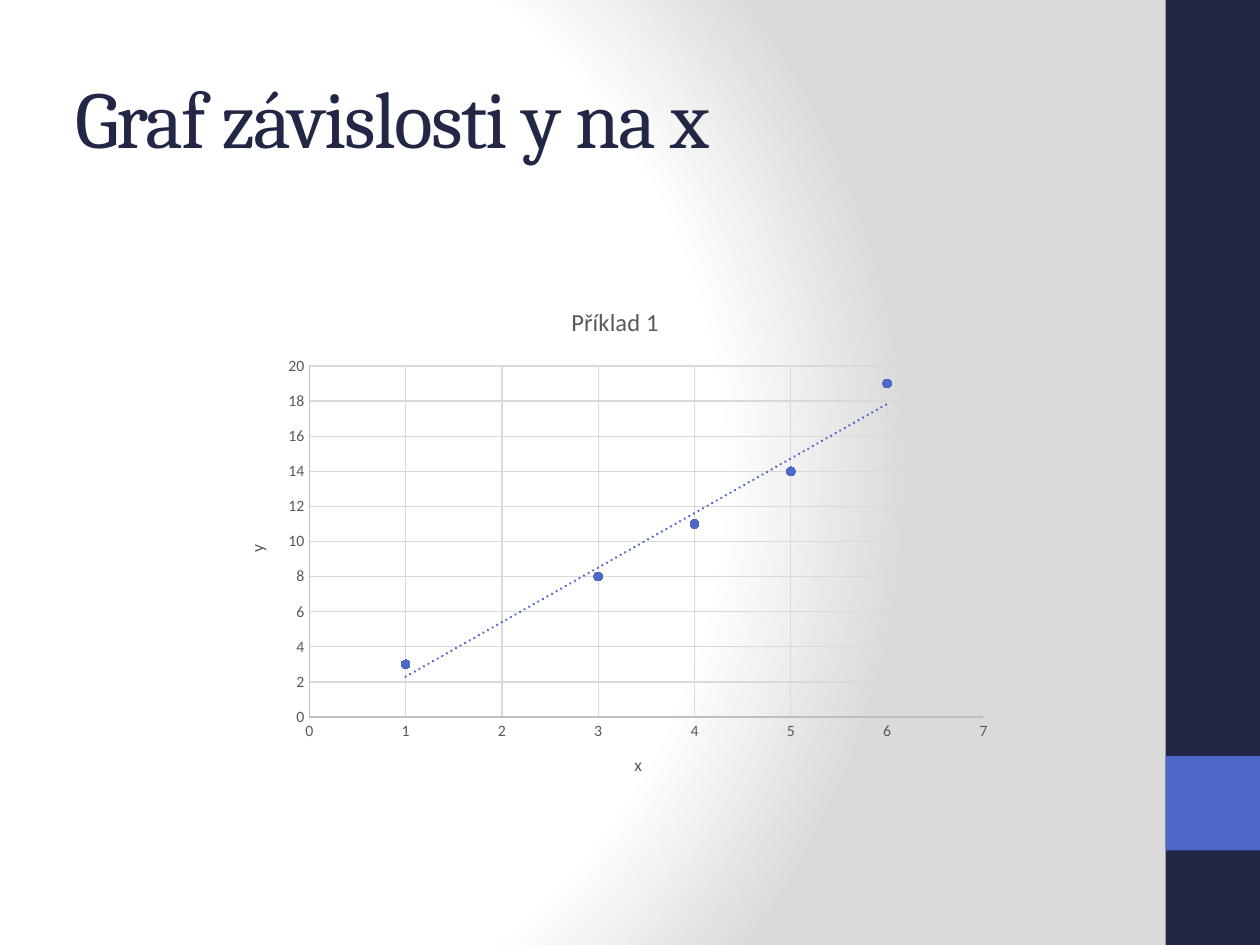
from dataclasses import dataclass

from lxml import etree
from pptx import Presentation
from pptx.chart.data import XyChartData
from pptx.dml.color import RGBColor
from pptx.enum.chart import XL_CHART_TYPE, XL_MARKER_STYLE, XL_TICK_MARK
from pptx.enum.shapes import MSO_SHAPE
from pptx.enum.text import MSO_ANCHOR
from pptx.oxml import parse_xml
from pptx.oxml.ns import nsdecls, qn
from pptx.util import Pt

RECTANGLE = MSO_SHAPE.RECTANGLE
MIDDLE = MSO_ANCHOR.MIDDLE
SCATTER = XL_CHART_TYPE.XY_SCATTER
CIRCLE = XL_MARKER_STYLE.CIRCLE
NO_TICK = XL_TICK_MARK.NONE

NAVY = "212745"
BLUE = "4E67C8"
GRAY = "595959"
AXIS_GRAY = "BFBFBF"
GRID_GRAY = "D9D9D9"
BODY_FONT = "Calibri"
POINTS = [(1, 3), (3, 8), (4, 11), (5, 14), (6, 19)]


@dataclass
class Band:
    top: float
    height: float
    color: str


@dataclass
class AxisStyle:
    title: str
    maximum: float
    step: float
    rotation: int


BANDS = [Band(0, 540, NAVY), Band(432, 54, BLUE)]
X_AXIS = AxisStyle("x", 7, 1, 0)
Y_AXIS = AxisStyle("y", 20, 2, -5400000)


def rgb(color: str) -> RGBColor:
    return RGBColor.from_string(color)


def style_font(font, size: float, color: str, name: str = BODY_FONT) -> None:
    font.size = Pt(size)
    font.bold = False
    font.name = name
    font.color.rgb = rgb(color)


def write_text(text_frame, text: str, *, size: float, color: str,
               font: str = BODY_FONT, spacing: float = 0) -> None:
    run = text_frame.paragraphs[0].add_run()
    run.text = text
    style_font(run.font, size, color, font)
    if spacing:
        run.font._element.set("spc", str(round(spacing * 100)))


def style_line(line, color: str, width: float = 0.75) -> None:
    line.color.rgb = rgb(color)
    line.width = Pt(width)


def set_background(slide) -> None:
    stops = "".join(
        f'<a:gs pos="{position * 1000}"><a:srgbClr val="{color}"/></a:gs>'
        for position, color in [(0, "FFFFFF"), (75, "FFFFFF"), (100, "DADADA")])
    background = parse_xml(
        f'<p:bg {nsdecls("p", "a")}><p:bgPr><a:gradFill rotWithShape="1">'
        f'<a:gsLst>{stops}</a:gsLst><a:path path="circle">'
        '<a:fillToRect l="20000" t="50000" r="100000" b="50000"/></a:path>'
        '</a:gradFill><a:effectLst/></p:bgPr></p:bg>')
    slide.element.find(qn("p:cSld")).insert(0, background)


def add_band(slide, band: Band) -> None:
    shape = slide.shapes.add_shape(
        RECTANGLE, Pt(666), Pt(band.top), Pt(54), Pt(band.height))
    shape.shadow.inherit = False
    shape.fill.solid()
    shape.fill.fore_color.rgb = rgb(band.color)
    shape.line.fill.background()


def add_title(slide, text: str) -> None:
    shape = slide.shapes.add_textbox(Pt(36), Pt(21.6), Pt(600), Pt(90))
    shape.text_frame.word_wrap = True
    shape.text_frame.vertical_anchor = MIDDLE
    write_text(shape.text_frame, text, size=46, color=NAVY, font="Cambria", spacing=-1)


def style_axis(axis, style: AxisStyle) -> None:
    axis.minimum_scale = 0
    axis.maximum_scale = style.maximum
    axis.major_unit = style.step
    axis.major_tick_mark = axis.minor_tick_mark = NO_TICK
    axis.has_major_gridlines = True
    style_line(axis.major_gridlines.format.line, GRID_GRAY)
    style_line(axis.format.line, AXIS_GRAY)
    style_font(axis.tick_labels.font, 9, GRAY)
    text_frame = axis.axis_title.text_frame
    write_text(text_frame, style.title, size=10, color=GRAY)
    text_frame._txBody.bodyPr.set("rot", str(style.rotation))


def add_trendline(series) -> None:
    trendline = parse_xml(
        f'<c:trendline {nsdecls("c", "a")}><c:spPr>'
        f'<a:ln w="{Pt(1.5)}" cap="rnd"><a:solidFill><a:srgbClr val="{BLUE}"/>'
        '</a:solidFill><a:prstDash val="sysDot"/></a:ln></c:spPr>'
        '<c:trendlineType val="linear"/><c:dispRSqr val="0"/>'
        '<c:dispEq val="0"/></c:trendline>')
    series._element.find(qn("c:xVal")).addprevious(trendline)


def set_plot_layout(chart, **fractions: float) -> None:
    plot_area = chart._chartSpace.chart.plotArea
    for layout in plot_area.findall(qn("c:layout")):
        plot_area.remove(layout)
    layout = etree.Element(qn("c:layout"))
    manual = etree.SubElement(layout, qn("c:manualLayout"))
    settings = {"layoutTarget": "inner", "xMode": "edge", "yMode": "edge", **fractions}
    for name, value in settings.items():
        etree.SubElement(manual, qn(f"c:{name}")).set("val", str(value))
    plot_area.insert(0, layout)


def add_scatter_chart(slide) -> None:
    data = XyChartData()
    data_series = data.add_series("Series 1")
    for x, y in POINTS:
        data_series.add_data_point(x, y)
    chart = slide.shapes.add_chart(
        SCATTER, Pt(127.5), Pt(162), Pt(448), Pt(295), data).chart
    style_font(chart.font, 10, "000000")
    chart.has_legend = False
    chart.has_title = True
    write_text(chart.chart_title.text_frame, "Příklad 1", size=14, color=GRAY)
    chart.chart_title.include_in_layout = False
    style_axis(chart.category_axis, X_AXIS)
    style_axis(chart.value_axis, Y_AXIS)
    set_plot_layout(chart, x=0.11, y=0.16, w=0.86, h=0.68)

    plot = chart.plots[0]
    plot.vary_by_categories = False
    series = plot.series[0]
    series.smooth = False
    series.format.line.fill.background()
    series.marker.style = CIRCLE
    series.marker.size = 5
    series.marker.format.fill.solid()
    series.marker.format.fill.fore_color.rgb = rgb(BLUE)
    style_line(series.marker.format.line, BLUE)
    add_trendline(series)


def main() -> None:
    presentation = Presentation()
    presentation.slide_width = Pt(720)
    presentation.slide_height = Pt(540)
    slide = presentation.slides.add_slide(presentation.slide_layouts[6])
    set_background(slide)
    for band in BANDS:
        add_band(slide, band)
    add_title(slide, "Graf závislosti y na x")
    add_scatter_chart(slide)
    presentation.save("out.pptx")


if __name__ == "__main__":
    main()
